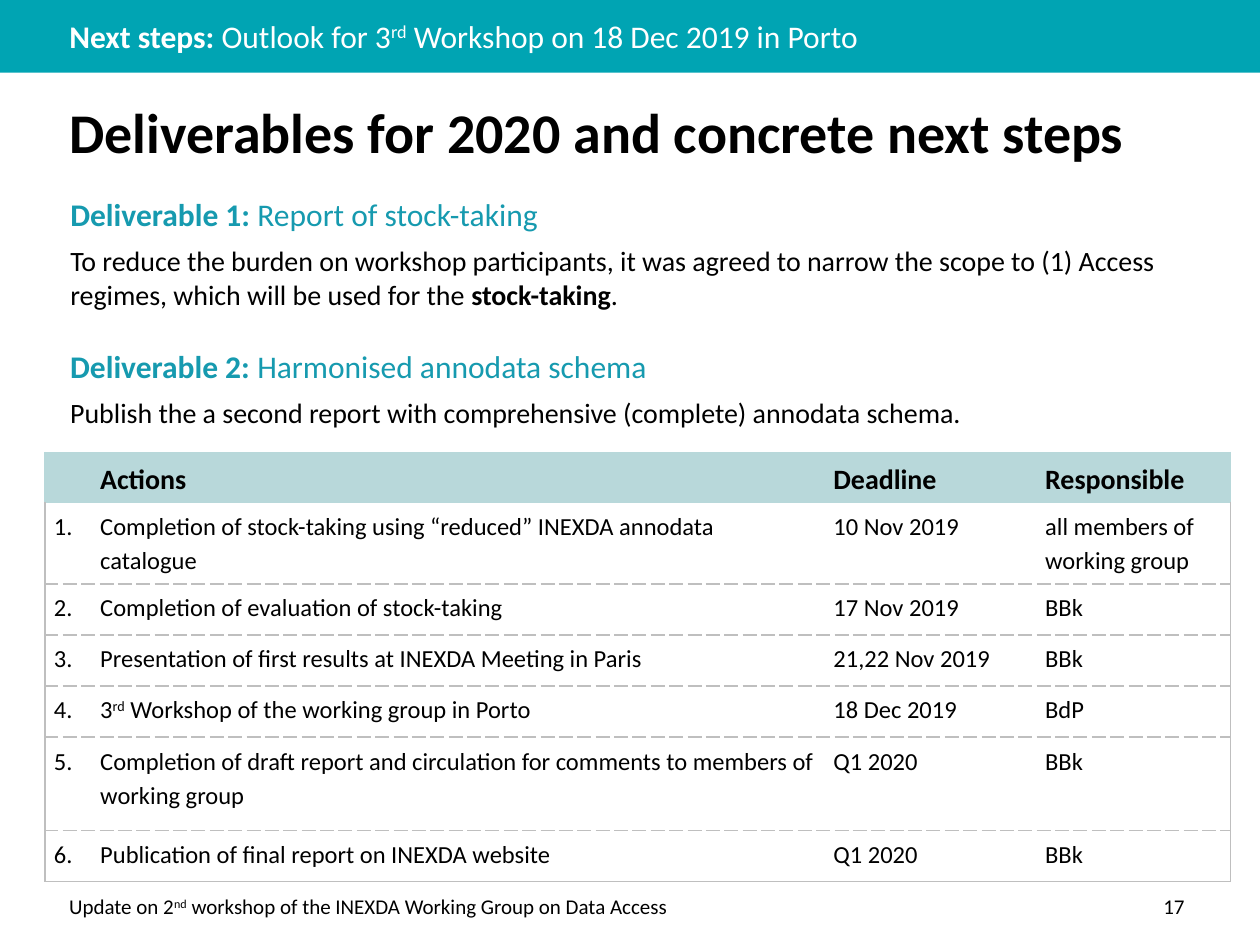
"""Builds the slide on deliverables for 2020 and the next steps towards them."""
from dataclasses import dataclass

from lxml import etree
from pptx import Presentation
from pptx.dml.color import RGBColor
from pptx.enum.shapes import MSO_SHAPE
from pptx.enum.text import MSO_ANCHOR, MSO_AUTO_SIZE, PP_ALIGN
from pptx.oxml.ns import qn
from pptx.util import Pt

RECTANGLE = MSO_SHAPE.RECTANGLE
TOP, MIDDLE, BOTTOM = MSO_ANCHOR.TOP, MSO_ANCHOR.MIDDLE, MSO_ANCHOR.BOTTOM
LEFT, RIGHT = PP_ALIGN.LEFT, PP_ALIGN.RIGHT
NO_AUTOSIZE = MSO_AUTO_SIZE.NONE


@dataclass(frozen=True)
class Theme:
    font: str = "Calibri"
    band: str = "00A4B3"
    accent: str = "169AAF"
    ink: str = "000000"
    paper: str = "FFFFFF"
    header: str = "B8D8DA"
    rule: str = "BFBFBF"
    title_size: int = 32
    heading_size: int = 18
    body_size: int = 16
    cell_size: int = 14
    footer_size: int = 12


@dataclass(frozen=True)
class Span:
    text: str
    bold: bool = False
    raised: bool = False


@dataclass(frozen=True)
class Line:
    spans: list
    size: int
    color: str
    before: float = 0
    after: float = 0
    spacing: float = 1.0
    align: PP_ALIGN = LEFT


class SlideBuilder:
    """Holds the theme and the current slide and adds each kind of element."""

    def __init__(self, slide, theme):
        self.slide = slide
        self.theme = theme

    def band(self, width, height):
        band = self.slide.shapes.add_shape(RECTANGLE, 0, 0, width, height)
        band.shadow.inherit = False
        band.fill.solid()
        band.fill.fore_color.rgb = RGBColor.from_string(self.theme.band)
        band.line.fill.background()
        self.slide.shapes._spTree.insert(2, band._element)

    def paragraph(self, para, line):
        properties = para._p.get_or_add_pPr()
        properties.set("marL", "0")
        properties.set("indent", "0")
        para.alignment = line.align
        para.line_spacing = line.spacing
        para.space_before = Pt(line.before)
        para.space_after = Pt(line.after)
        etree.SubElement(properties, qn("a:buNone"))
        font = para.font
        font.name = self.theme.font
        font.size = Pt(line.size)
        font.color.rgb = RGBColor.from_string(line.color)
        same_weight = len({span.bold for span in line.spans}) == 1
        if same_weight:
            font.bold = line.spans[0].bold
        for span in line.spans:
            run = para.add_run()
            run.text = span.text
            if not same_weight:
                run.font.bold = span.bold
            if span.raised:
                run.font._element.set("baseline", "30000")

    def fill_text(self, frame, lines, anchor=TOP):
        frame.word_wrap = True
        frame.auto_size = NO_AUTOSIZE
        frame.vertical_anchor = anchor
        for index, line in enumerate(lines):
            para = frame.add_paragraph() if index else frame.paragraphs[0]
            self.paragraph(para, line)

    def placeholder(self, index, place, lines, anchor=TOP):
        box = self.slide.placeholders[index]
        box.left, box.top, box.width, box.height = map(Pt, place)
        self.fill_text(box.text_frame, lines, anchor)

    def text(self, place, lines):
        box = self.slide.shapes.add_textbox(*map(Pt, place))
        self.fill_text(box.text_frame, lines)

    def border(self, cell, side, color=None, dash="solid"):
        line = etree.SubElement(cell._tc.get_or_add_tcPr(), qn(f"a:ln{side}"), w=str(Pt(1)))
        if color is None:
            etree.SubElement(line, qn("a:noFill"))
            return
        fill = etree.SubElement(line, qn("a:solidFill"))
        etree.SubElement(fill, qn("a:srgbClr"), val=color)
        etree.SubElement(line, qn("a:prstDash"), val=dash)

    def cell(self, cell, spans, row, column, last_row, last_column):
        theme = self.theme
        is_header = row == 0
        edge = theme.header if is_header else theme.rule
        above = (theme.header, "solid") if row <= 1 else (theme.rule, "sysDash")
        below = (edge, "solid" if is_header or row == last_row else "sysDash")
        self.border(cell, "L", edge if column == 0 else None)
        self.border(cell, "R", edge if column == last_column else None)
        self.border(cell, "T", *above)
        self.border(cell, "B", *below)
        if is_header:
            cell.fill.solid()
            cell.fill.fore_color.rgb = RGBColor.from_string(theme.header)
        else:
            cell.fill.background()
        cell.margin_left = cell.margin_right = Pt(5)
        cell.margin_top = cell.margin_bottom = Pt(3)
        cell.vertical_anchor = BOTTOM if is_header else TOP
        size = theme.body_size if is_header else theme.cell_size
        self.paragraph(cell.text_frame.paragraphs[0], Line(spans, size, theme.ink, spacing=1.15))

    def table(self, left, top, widths, heights, rows):
        place = map(Pt, (left, top, sum(widths), sum(heights)))
        table = self.slide.shapes.add_table(len(rows), len(widths), *place).table
        table.first_row = table.horz_banding = False
        for column, width in zip(table.columns, widths):
            column.width = Pt(width)
        for table_row, height in zip(table.rows, heights):
            table_row.height = Pt(height)
        for row, contents in enumerate(rows):
            for column, spans in enumerate(contents):
                self.cell(table.cell(row, column), spans, row, column, len(rows) - 1, len(widths) - 1)


def main():
    theme = Theme()
    deck = Presentation()
    deck.slide_width, deck.slide_height = Pt(720), Pt(540)
    builder = SlideBuilder(deck.slides.add_slide(deck.slide_layouts[3]), theme)

    def deliverable(number, name, spans):
        heading = [Span(f"Deliverable {number}: ", bold=True), Span(name)]
        return [
            Line(heading, theme.heading_size, theme.accent, after=3),
            Line(spans, theme.body_size, theme.ink, before=3.2, after=6),
        ]

    builder.band(deck.slide_width, Pt(41.5))
    title = [Span("Deliverables for 2020 and concrete next steps", bold=True)]
    builder.placeholder(0, (32.4, 51, 656, 48), [Line(title, theme.title_size, theme.ink)], MIDDLE)
    topic = [Span("Next steps: ", bold=True), Span("Outlook for 3"), Span("rd", raised=True),
             Span(" Workshop on 18 Dec 2019 in Porto")]
    builder.placeholder(1, (32.4, 4.3, 590, 32), [Line(topic, theme.heading_size, theme.paper)], MIDDLE)
    builder.placeholder(2, (33, 108, 652, 78.5), deliverable(1, "Report of stock-taking", [
        Span("To reduce the burden on workshop participants, it was agreed to narrow the scope to "
             "(1) Access regimes, which will be used for the"),
        Span(" stock-taking", bold=True), Span(".")]))
    builder.text((33, 194.5, 660, 63), deliverable(2, "Harmonised annodata schema", [
        Span("Publish the a second report with comprehensive (complete) annodata schema.")]))

    actions = [
        ([Span("Completion of stock-taking using “reduced” INEXDA annodata catalogue")],
         "10 Nov 2019", "all members of working group"),
        ([Span("Completion of evaluation of stock-taking")], "17 Nov 2019", "BBk"),
        ([Span("Presentation of first results at INEXDA Meeting in Paris")], "21,22 Nov 2019", "BBk"),
        ([Span("3"), Span("rd", raised=True), Span(" Workshop of the working group in Porto")],
         "18 Dec 2019", "BdP"),
        ([Span("Completion of draft report and circulation for comments to members of working group")],
         "Q1 2020", "BBk"),
        ([Span("Publication of final report on INEXDA website")], "Q1 2020", "BBk"),
    ]
    rows = [[[]] + [[Span(name, bold=True)] for name in ("Actions", "Deadline", "Responsible")]]
    rows += [[[Span(f"{number}.")], action, [Span(deadline)], [Span(responsible)]]
             for number, (action, deadline, responsible) in enumerate(actions, 1)]
    builder.table(25.8, 258.6, [26.5, 419, 121, 111], [28.5, 46.5, 29.2, 29.2, 29.2, 53.5, 29.2], rows)

    footer = [Span("Update on 2"), Span("nd", raised=True),
              Span(" workshop of the INEXDA Working Group on Data Access")]
    builder.text((32.4, 507, 580, 22), [Line(footer, theme.footer_size, theme.ink)])
    builder.text((622, 507, 62, 22), [Line([Span("17")], theme.footer_size, theme.ink, align=RIGHT)])
    deck.save("out.pptx")


if __name__ == "__main__":
    main()
